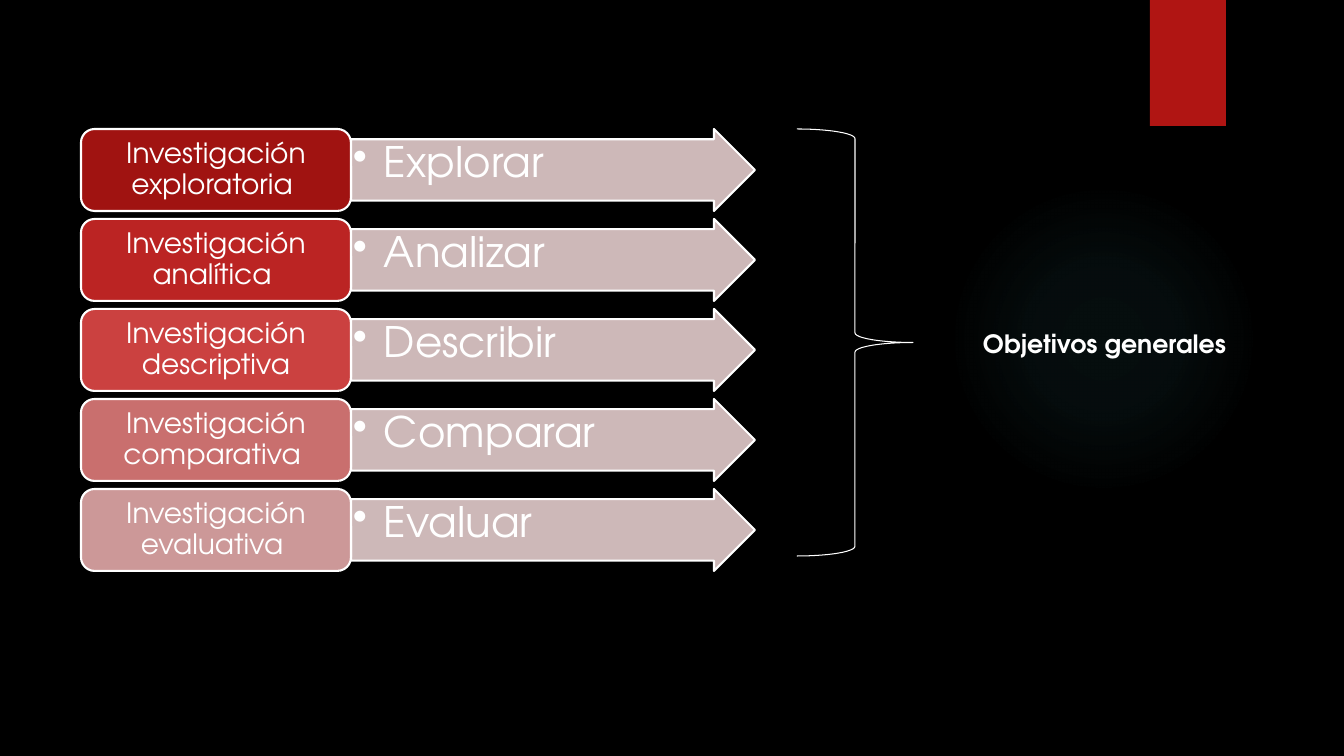
from dataclasses import dataclass

from lxml.etree import SubElement
from pptx import Presentation
from pptx.dml.color import RGBColor
from pptx.enum.shapes import MSO_SHAPE
from pptx.enum.text import MSO_ANCHOR, PP_ALIGN
from pptx.oxml import parse_xml
from pptx.oxml.ns import nsdecls, qn
from pptx.shapes.autoshape import Shape
from pptx.slide import Slide
from pptx.text.text import TextFrame, _Paragraph
from pptx.util import Emu, Pt

FONT = "TeX Gyre Adventor"
COLORS = {
    "background": "000000",
    "white": "FFFFFF",
    "ribbon": "B01513",
    "glow": "50B9C1",
    "arrow": "E4CCCC",
}
FIRST_TOP, ROW_PITCH, ROW_HEIGHT = 129, 90, 82
LABEL_LEFT, LABEL_WIDTH, ARROW_WIDTH = 81, 270, 404


@dataclass(frozen=True)
class Research:
    label: str
    goal: str
    color: str


RESEARCH_TYPES = [
    Research("Investigación exploratoria ", "Explorar", "A01311"),
    Research("Investigación analítica ", "Analizar", "BB2423"),
    Research("Investigación descriptiva", "Describir", "CB4140"),
    Research("Investigación comparativa ", "Comparar", "C96F6E"),
    Research("Investigación evaluativa ", "Evaluar", "CC9898"),
]


def px(length: int) -> Emu:
    return Emu(round(length * 914400 / 100.8))


def rgb(color: str) -> RGBColor:
    return RGBColor.from_string(color)


def add_shape(page: Slide, kind: MSO_SHAPE, left: int, top: int, width: int, height: int,
              fill: str | None = None, line_width: float = 0) -> Shape:
    shape = page.shapes.add_shape(kind, px(left), px(top), px(width), px(height))
    shape.shadow.inherit = False
    if fill:
        shape.fill.solid()
        shape.fill.fore_color.rgb = rgb(fill)
    else:
        shape.fill.background()
    if line_width:
        shape.line.color.rgb = rgb(COLORS["white"])
        shape.line.width = Pt(line_width)
    else:
        shape.line.fill.background()
    return shape


def set_margins(frame: TextFrame, horizontal: int, vertical: int) -> None:
    frame.margin_left = frame.margin_right = px(horizontal)
    frame.margin_top = frame.margin_bottom = px(vertical)


def write(frame: TextFrame, text: str, size: int, align: PP_ALIGN, bold: bool = False) -> _Paragraph:
    frame.word_wrap = True
    para = frame.paragraphs[0]
    para.text = text
    para.alignment = align
    para.font.name = FONT
    para.font.size = Pt(size)
    para.font.bold = bold
    para.font.color.rgb = rgb(COLORS["white"])
    return para


def add_bullet(frame: TextFrame, indent: int) -> None:
    properties = frame.paragraphs[0]._p.get_or_add_pPr()
    properties.set("marL", str(px(indent)))
    properties.set("indent", str(-px(indent)))
    SubElement(properties, qn("a:buChar")).set("char", "•")


def add_glow(page: Slide) -> None:
    glow = add_shape(page, MSO_SHAPE.OVAL, 949, 184, 310, 310)
    stops = "".join(
        f'<a:gs pos="{position * 1000}"><a:srgbClr val="{COLORS["glow"]}">'
        f'<a:alpha val="{opacity * 1000}"/></a:srgbClr></a:gs>'
        for position, opacity in [(0, 7), (36, 6), (69, 0), (100, 0)]
    )
    gradient = parse_xml(
        f'<a:gradFill {nsdecls("a")}><a:gsLst>{stops}</a:gsLst><a:path path="circle">'
        '<a:fillToRect l="50000" t="50000" r="50000" b="50000"/></a:path></a:gradFill>'
    )
    properties = glow._element.spPr
    properties.replace(properties.find(qn("a:noFill")), gradient)


def add_research(page: Slide, research: Research, top: int) -> None:
    arrow = add_shape(page, MSO_SHAPE.RIGHT_ARROW, LABEL_LEFT + LABEL_WIDTH, top,
                      ARROW_WIDTH, ROW_HEIGHT, COLORS["arrow"], 1.5)
    arrow.adjustments[0] = 0.75
    arrow.adjustments[1] = 0.5
    fill_color = arrow._element.spPr.find(qn("a:solidFill")).find(qn("a:srgbClr"))
    SubElement(fill_color, qn("a:alpha")).set("val", "90000")
    arrow.text_frame.vertical_anchor = MSO_ANCHOR.TOP
    set_margins(arrow.text_frame, 2, 2)
    add_bullet(arrow.text_frame, 31)
    write(arrow.text_frame, research.goal, 30, PP_ALIGN.LEFT).line_spacing = 0.9

    label = add_shape(page, MSO_SHAPE.ROUNDED_RECTANGLE, LABEL_LEFT, top,
                      LABEL_WIDTH, ROW_HEIGHT, research.color, 1.5)
    label.text_frame.vertical_anchor = MSO_ANCHOR.MIDDLE
    set_margins(label.text_frame, 8, 4)
    write(label.text_frame, research.label, 20, PP_ALIGN.CENTER).line_spacing = 0.9


def main() -> None:
    deck = Presentation()
    deck.slide_width, deck.slide_height = px(1344), px(756)
    page = deck.slides.add_slide(deck.slide_layouts[6])
    page.background.fill.solid()
    page.background.fill.fore_color.rgb = rgb(COLORS["background"])

    add_glow(page)
    add_shape(page, MSO_SHAPE.RECTANGLE, 1150, 0, 76, 126, COLORS["ribbon"])
    for row, research in enumerate(RESEARCH_TYPES):
        add_research(page, research, FIRST_TOP + row * ROW_PITCH)
    add_shape(page, MSO_SHAPE.RIGHT_BRACE, 797, FIRST_TOP, 116, 427, line_width=0.75)
    goals_box = page.shapes.add_textbox(px(954), px(323), px(308), px(40))
    write(goals_box.text_frame, "Objetivos generales ", 18, PP_ALIGN.CENTER, bold=True)

    deck.save("out.pptx")


if __name__ == "__main__":
    main()
